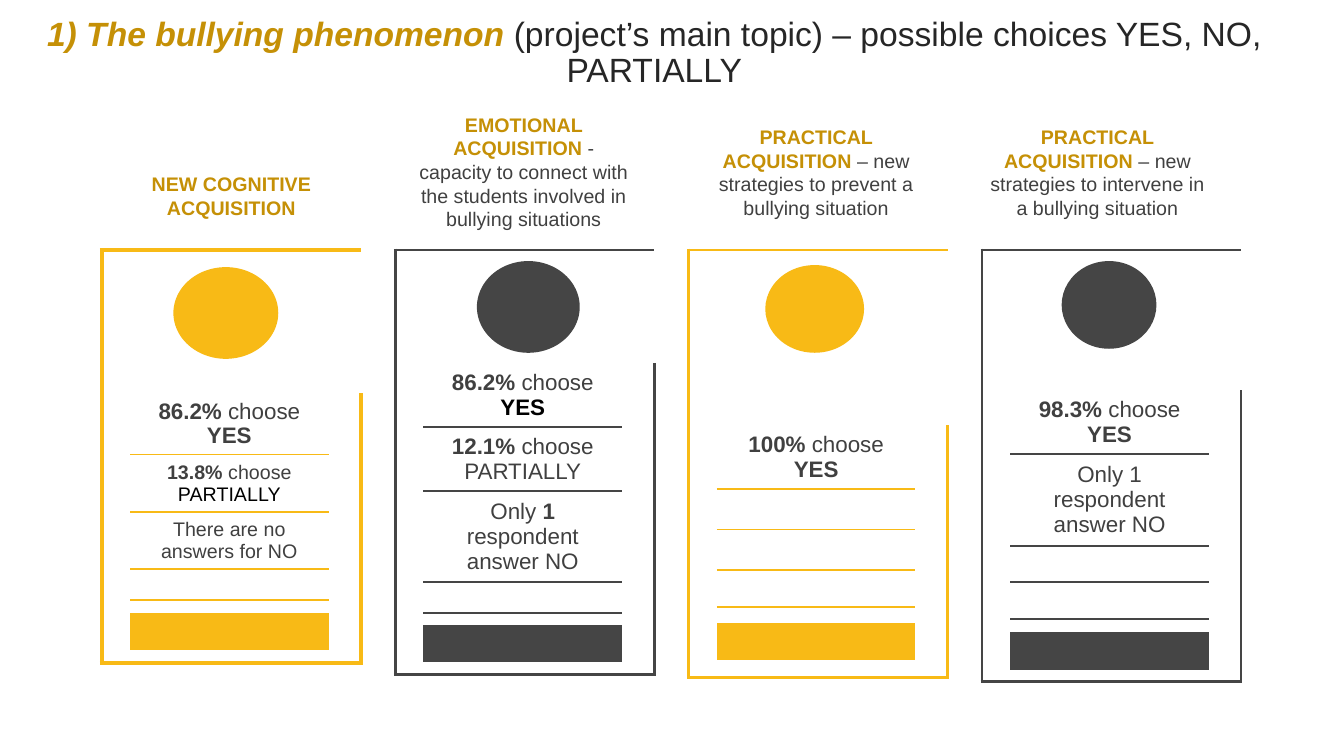
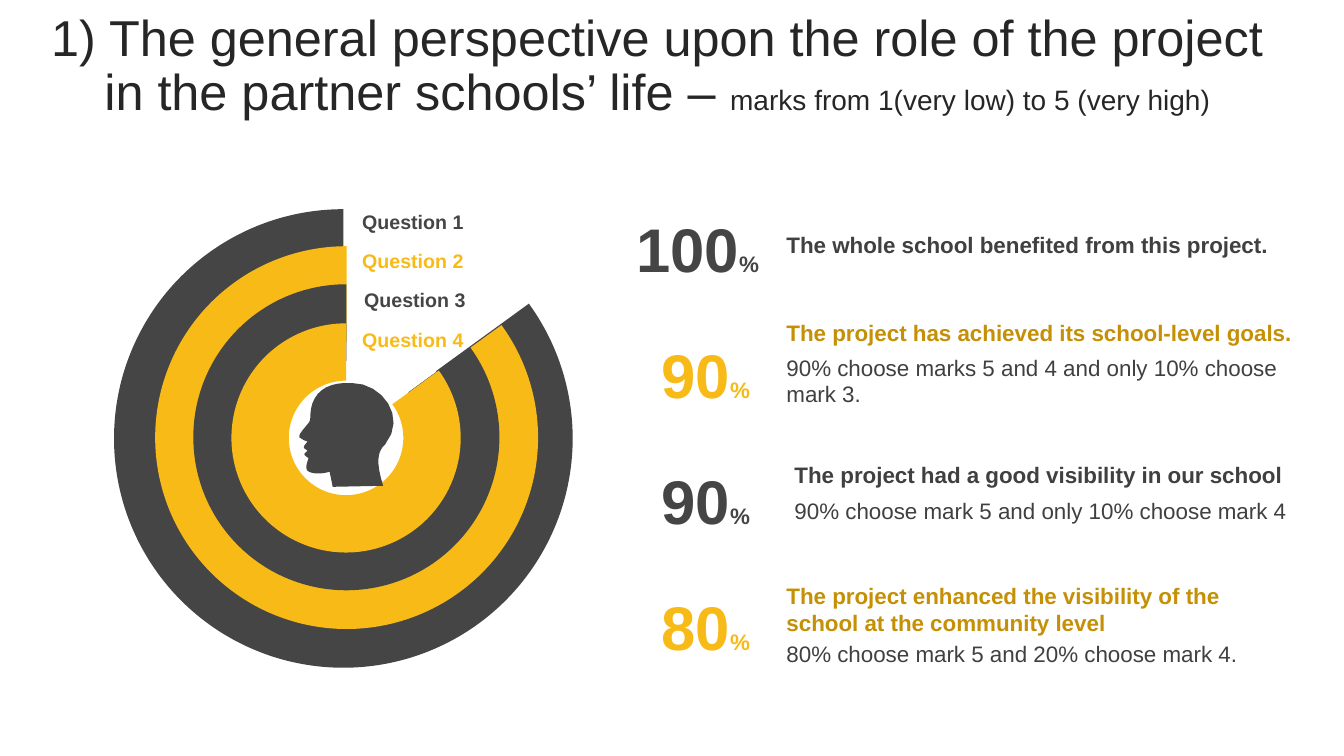
import pptx
import pptx.chart.data
import pptx.dml.color
import pptx.enum.chart
import pptx.enum.shapes
import pptx.enum.text
import pptx.oxml
import pptx.oxml.ns
import pptx.util
from lxml import etree

RGB = pptx.dml.color.RGBColor
YELLOW, DARK, OCHRE = RGB(0xF8, 0xBA, 0x16), RGB(0x45, 0x45, 0x45), RGB(0xC5, 0x90, 0x06)
BODY, TITLE, BLACK = RGB(0x40, 0x40, 0x40), RGB(0x26, 0x26, 0x26), RGB(0, 0, 0)
FONT = "Arial"
NO_GRID_STYLE = "{2D5ABB26-0587-4C30-8999-92F81FD0307C}"
CENTER = pptx.enum.text.PP_ALIGN.CENTER
LEFT = pptx.enum.text.PP_ALIGN.LEFT
MIDDLE = pptx.enum.text.MSO_ANCHOR.MIDDLE
TOP = pptx.enum.text.MSO_ANCHOR.TOP
In, Pt, qn = pptx.util.Inches, pptx.util.Pt, pptx.oxml.ns.qn

# Text runs: (text, format); a format holds font attributes and "color"
B = {"bold": True}
SMALL = {"size": Pt(14)}
HEAD = {"size": Pt(14), "bold": True, "color": OCHRE}
PLAIN_HEAD = {"size": Pt(14), "color": BODY}

CHOICES_TITLE = [
    ("1) The bullying phenomenon ", {"bold": True, "italic": True, "color": OCHRE}),
    ("(project’s main topic) – possible choices YES, NO, PARTIALLY", {})]
CARDS = [
    {"color": YELLOW, "frame": 3, "head": (1.23, 1.66, 2.13, 0.57),
     "circle": (1.72, 2.65, 1.04, 0.91),
     "rows": [1.42, 0.61, 0.57, 0.57, 0.3, 0.13, 0.37, 0.13],
     "title": [("NEW COGNITIVE ACQUISITION", HEAD)],
     "answers": [
         [("86.2%", B), (" choose ", {}), ("YES", B)],
         [("13.8% ", {**SMALL, **B}), ("choose ", SMALL),
          ("PARTIALLY", {**SMALL, "color": BLACK})],
         [("There are no answers for NO", SMALL)]]},
    {"color": DARK, "frame": 2.25, "head": (4.13, 1.07, 2.13, 1.28),
     "circle": (4.73, 2.59, 1.02, 0.91),
     "rows": [1.12, 0.64, 0.63, 0.89, 0.31, 0.12, 0.37, 0.12],
     "title": [("EMOTIONAL ACQUISITION ", HEAD),
               ("- capacity to connect with the students involved in bullying situations",
                PLAIN_HEAD)],
     "answers": [
         [("86.2%", B), (" choose ", {}), ("YES", {**B, "color": BLACK})],
         [("12.1% ", B), ("choose PARTIALLY", {})],
         [("Only ", {}), ("1", B), (" respondent answer NO", {})]]},
    {"color": YELLOW, "frame": 2.25, "head": (7.03, 1.19, 2.13, 1.04),
     "circle": (7.59, 2.63, 0.98, 0.87),
     "rows": [1.74, 0.62, 0.4, 0.4, 0.37, 0.16, 0.37, 0.17],
     "title": [("PRACTICAL ACQUISITION ", HEAD),
               ("– new strategies to prevent a bullying situation", PLAIN_HEAD)],
     "answers": [[("100% ", B), ("choose ", {}), ("YES", B)]]},
    {"color": DARK, "frame": 2.25, "head": (9.82, 1.19, 2.13, 1.04),
     "circle": (10.53, 2.59, 0.94, 0.87),
     "rows": [1.39, 0.62, 0.91, 0.36, 0.37, 0.13, 0.37, 0.12],
     "title": [("PRACTICAL ACQUISITION ", HEAD),
               ("– new strategies to intervene in a bullying situation", PLAIN_HEAD)],
     "answers": [
         [("98.3% ", B), ("choose ", {}), ("YES", B)],
         [("Only 1 respondent answer NO", {})]]},
]
CARD_LEFT, CARD_TOP, CARD_STEP = 1.01, 2.48, 2.91
CARD_COLS = [0.28, 1.97, 0.32]
RULED_ROWS, BAND_ROW = range(1, 5), 6

ROLE_TITLE = [
    ("1) The general perspective upon the role of the project in the partner schools’ life – ",
     {"size": Pt(36)}),
    ("marks from 1(very low) to 5 (very high)", {"size": Pt(20)})]
RINGS = [  # left, top, size, hole %
    (1.06, 2, 4.72, 87), (1.48, 2.38, 3.94, 84), (1.87, 2.77, 3.15, 80), (2.26, 3.17, 2.36, 74)]
RING_VALUES = (15, 85)
RING_LAYOUT = {"x": 0.015, "y": 0.011, "w": 0.964, "h": 0.974}
RESULTS = [  # mark, statement and its box, detail and its box
    ("100", "The whole school benefited from this project.", (7.68, 2.24, 5.17, 0.37), None, None),
    ("90", "The project has achieved its school-level goals.", (7.68, 3.12, 5.46, 0.37),
     "90% choose marks 5 and 4 and only 10% choose mark 3.", (7.68, 3.46, 5.46, 0.8)),
    ("90", "The project had a good visibility in our school", (7.76, 4.53, 5.19, 0.37),
     "90% choose mark 5 and only 10% choose mark 4", (7.76, 4.88, 5.19, 0.54)),
    ("80", "The project enhanced the visibility of the school at the community level",
     (7.68, 5.73, 5.03, 0.6),
     "80% choose mark 5 and 20% choose mark 4.", (7.68, 6.3, 5.03, 0.52)),
]
HEAD_START = (3.49, 3.8)
HEAD_CURVES = [  # two points: a line end; six numbers: two controls and the end
    (3.28, 3.79, 3.15, 3.86, 3.1, 4), (3.06, 4.12, 3.1, 4.16, 3.05, 4.21),
    (3.01, 4.26, 2.96, 4.31, 2.97, 4.34), (2.99, 4.35, 3.01, 4.37, 3.05, 4.38),
    (3.04, 4.4, 3, 4.43, 3.02, 4.45), (3.05, 4.47),
    (3.04, 4.49, 3.02, 4.49, 3.02, 4.51), (3.03, 4.53, 3.06, 4.54, 3.06, 4.55),
    (3.04, 4.6, 3.03, 4.65, 3.05, 4.67), (3.08, 4.7, 3.18, 4.71, 3.27, 4.68),
    (3.3, 4.83), (3.8, 4.82),
    (3.73, 4.59, 3.74, 4.48, 3.82, 4.41), (4.04, 4.14, 3.79, 3.8, 3.49, 3.8)]


def write(p, runs, align=CENTER, **base):
    p.alignment = align
    for text, fmt in runs:
        r = p.add_run()
        r.text = text
        for name, value in {"name": FONT, "bold": False, **base, **fmt}.items():
            if name == "color":
                r.font.color.rgb = value
            else:
                setattr(r.font, name, value)


def add_title(s, runs, left, top):
    sp = s.shapes.title
    sp.left, sp.top, sp.width, sp.height = In(left), In(top), In(12.66), In(0.79)
    tf = sp.text_frame
    tf.vertical_anchor, tf.word_wrap = MIDDLE, True
    tf.auto_size = pptx.enum.text.MSO_AUTO_SIZE.NONE
    p = tf.paragraphs[0]
    p.line_spacing, p.space_before = 0.9, Pt(10)
    write(p, runs, size=Pt(24), color=TITLE)


def add_text(s, box, runs, inset=0.1, align=CENTER, **base):
    tf = s.shapes.add_textbox(*map(In, box)).text_frame
    tf.word_wrap, tf.vertical_anchor = True, TOP
    tf.margin_left = tf.margin_right = In(inset)
    write(tf.paragraphs[0], runs, align, **base)


def paint(sp, color):
    sp.shadow.inherit = False
    sp.fill.solid()
    sp.fill.fore_color.rgb = color
    sp.line.fill.background()


def set_borders(cell, widths, color):
    """Draw the sides given in widths (points) and leave the others bare."""
    tc_pr = cell._tc.get_or_add_tcPr()
    for side in "LRTB":
        ln = etree.SubElement(tc_pr, qn("a:ln" + side))
        if side in widths:
            ln.set("w", str(Pt(widths[side])))
            fill = etree.SubElement(ln, qn("a:solidFill"))
            etree.SubElement(fill, qn("a:srgbClr")).set("val", str(color))
        else:
            etree.SubElement(ln, qn("a:noFill"))


def card_borders(row, col, last_row, last_col, frame):
    widths = {}
    if col == 1 and row in RULED_ROWS:
        widths["B"] = 1.5
    if col == 1 and row - 1 in RULED_ROWS:
        widths["T"] = 1.5
    edges = {"L": col == 0, "R": col == last_col, "T": row == 0, "B": row == last_row}
    widths.update({side: frame for side, on in edges.items() if on})
    return widths


def add_card(s, left, card):
    rows, color = card["rows"], card["color"]
    frame = s.shapes.add_table(len(rows), len(CARD_COLS), In(left), In(CARD_TOP),
                               In(sum(CARD_COLS)), In(sum(rows)))
    table = frame.table
    table.first_row = table.horz_banding = False
    table._tbl.tblPr.find(qn("a:tableStyleId")).text = NO_GRID_STYLE
    for column, width in zip(table.columns, CARD_COLS):
        column.width = In(width)
    for i, height in enumerate(rows):
        table.rows[i].height = In(height)
        for j in range(len(CARD_COLS)):
            cell = table.cell(i, j)
            set_borders(cell, card_borders(i, j, len(rows) - 1, len(CARD_COLS) - 1,
                                           card["frame"]), color)
            cell.fill.background()
            cell.vertical_anchor = MIDDLE
            p = cell.text_frame.paragraphs[0]
            if j == 1 and 1 <= i <= len(card["answers"]):
                write(p, card["answers"][i - 1], size=Pt(16), color=BODY)
            else:
                cell.margin_top = cell.margin_bottom = 0
                etree.SubElement(p._p, qn("a:endParaRPr")).set("sz", "100")
    band = table.cell(BAND_ROW, 1).fill
    band.solid()
    band.fore_color.rgb = color
    table.cell(0, 0).merge(table.cell(0, 2))
    for j in (0, 2):
        table.cell(2, j).merge(table.cell(4, j))
    circle = s.shapes.add_shape(pptx.enum.shapes.MSO_SHAPE.OVAL, *map(In, card["circle"]))
    paint(circle, color)
    add_text(s, card["head"], card["title"], inset=0)


def add_ring(s, left, top, size, hole, color):
    data = pptx.chart.data.CategoryChartData()
    data.categories = ["1", "2"]
    data.add_series("Series 1", RING_VALUES)
    chart = s.shapes.add_chart(pptx.enum.chart.XL_CHART_TYPE.DOUGHNUT, In(left), In(top),
                               In(size), In(size), data).chart
    chart.has_legend = chart.has_title = False
    chart.font.name, chart.font.size = FONT, Pt(18)
    chart.font.color.rgb = BLACK
    plot = chart.plots[0]
    plot.vary_by_categories, plot.has_data_labels = True, False
    gap, arc = (plot.series[0].points[i].format for i in range(2))
    gap.fill.background()
    arc.fill.solid()
    arc.fill.fore_color.rgb = color
    for part in (gap, arc):
        part.line.fill.background()
    area = chart._chartSpace.chart.plotArea
    area.find(qn("c:doughnutChart")).find(qn("c:holeSize")).set("val", str(hole))
    layout = area.find(qn("c:layout"))
    if layout is None:
        layout = pptx.oxml.parse_xml(
            '<c:layout xmlns:c="http://schemas.openxmlformats.org/drawingml/2006/chart"/>')
        area.insert(0, layout)
    manual = etree.SubElement(layout, qn("c:manualLayout"))
    settings = {"layoutTarget": "inner", "xMode": "edge", "yMode": "edge", **RING_LAYOUT}
    for name, value in settings.items():
        etree.SubElement(manual, qn("c:" + name)).set("val", str(value))


def outline(start, curves, steps=8):
    """Turn lines and cubic curves into a list of points."""
    points = [start]
    for curve in curves:
        if len(curve) == 2:
            points.append(curve)
            continue
        ends = [points[-1], curve[:2], curve[2:4], curve[4:]]
        for k in range(1, steps + 1):
            t = k / steps
            weights = ((1 - t) ** 3, 3 * t * (1 - t) ** 2, 3 * t * t * (1 - t), t ** 3)
            points.append(tuple(sum(w * e[axis] for w, e in zip(weights, ends))
                                for axis in (0, 1)))
    return points


def build_choices(s):
    add_title(s, CHOICES_TITLE, 0.16, 0.14)
    for i, card in enumerate(CARDS):
        add_card(s, CARD_LEFT + i * CARD_STEP, card)


def build_role(s):
    add_title(s, ROLE_TITLE, 0.19, 0.27)
    colors = [DARK, YELLOW] * 2
    for ring, color in zip(RINGS, colors):
        add_ring(s, *ring, color)
    for i, (mark, statement, box, detail, detail_box) in enumerate(RESULTS):
        color = colors[i]
        left = 6.16 if len(mark) > 2 else 6.32
        add_text(s, (left, 2.04 + 1.25 * i, 7.68 - left, 0.84),
                 [(mark, {"size": Pt(44)}), ("%", {"size": Pt(16)})], bold=True, color=color)
        add_text(s, box, [(statement, B)], 0.12, LEFT, size=Pt(16),
                 color=OCHRE if color == YELLOW else BODY)
        if detail:
            add_text(s, detail_box, [(detail, {})], 0.12, LEFT, size=Pt(16), color=BODY)
        add_text(s, (3.44 if i != 2 else 3.46, 2.03 + 0.39 * i, 1.31, 0.34),
                 [(f"Question {i + 1}", B)], size=Pt(14), color=color)
    points = [(In(x), In(y)) for x, y in outline(HEAD_START, HEAD_CURVES)]
    builder = s.shapes.build_freeform(*points[0])
    builder.add_line_segments(points[1:], close=True)
    paint(builder.convert_to_shape(), DARK)


def main():
    prs = pptx.Presentation()
    prs.slide_width, prs.slide_height = In(13.33), In(7.5)
    for build in (build_choices, build_role):
        build(prs.slides.add_slide(prs.slide_layouts[5]))
    prs.save("out.pptx")


if __name__ == "__main__":
    main()
